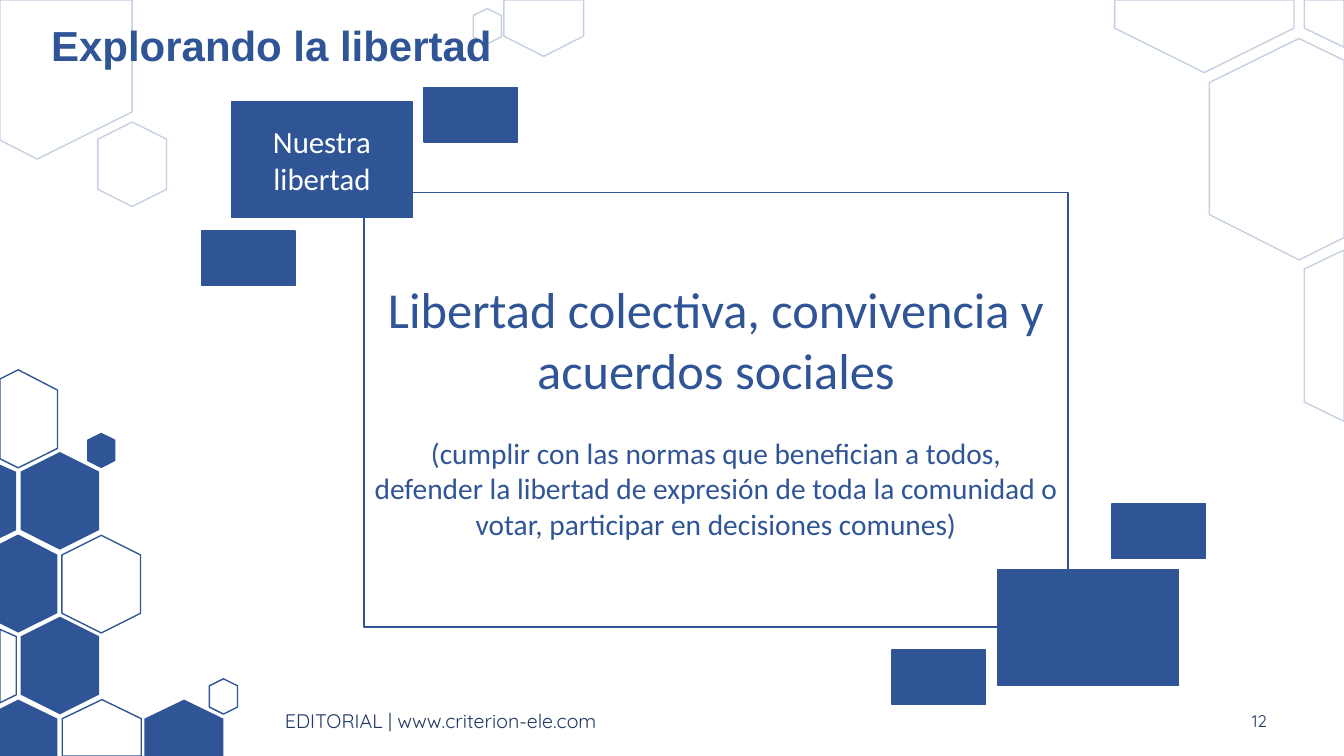
from dataclasses import dataclass

from lxml.etree import SubElement
from pptx import Presentation
from pptx.dml.color import RGBColor
from pptx.enum.shapes import MSO_SHAPE
from pptx.enum.text import MSO_ANCHOR, PP_ALIGN
from pptx.oxml.ns import qn
from pptx.util import Cm, Pt


@dataclass(frozen=True)
class Theme:
    blue: RGBColor = RGBColor(0x2F, 0x55, 0x97)
    navy: RGBColor = RGBColor(0x20, 0x38, 0x64)
    white: RGBColor = RGBColor(0xFF, 0xFF, 0xFF)
    line: Pt = Pt(1)
    pale_alpha: int = 28000
    heading_font: str = "Arial"
    body_font: str = "Calibri"
    footer_font: str = "Quicksand"
    title: Pt = Pt(30)
    statement: Pt = Pt(36)
    label: Pt = Pt(22)
    detail: Pt = Pt(21)
    footer: Pt = Pt(14)
    number: Pt = Pt(12)
    detail_gap: Pt = Pt(25.6)


THEME = Theme()

# Hexagon sizes before the quarter turn, in centimetres
LARGE, MEDIUM, SMALL = (2.46, 1.98), (2.13, 1.73), (0.89, 0.71)
# Distances between neighbouring honeycomb cells
ROW_PITCH, COLUMN_PITCH = 4.15, 2.07

# Pale cells cut by the slide edges
PALE_CELLS = [
    [(12.7, 0), (14.71, 0), (14.71, 0.91), (13.7, 1.42), (12.7, 0.91)],
    [(28.09, 0), (32.61, 0), (32.61, 0.71), (30.35, 1.83), (28.09, 0.71)],
    [(32.87, 0), (33.87, 0), (33.87, 1.19), (32.87, 0.71)],
    [(32.74, 0.97), (33.87, 1.52), (33.87, 5.99), (32.74, 6.55),
     (30.48, 5.41), (30.48, 2.08)],
    [(0, 0), (3.33, 0), (3.33, 2.82), (0.94, 4.01), (0, 3.53)],
    [(33.87, 6.3), (33.87, 10.62), (32.87, 10.13), (32.87, 6.78)],
]

# Honeycomb cells cut by the left and bottom edges
LEFT_CELL = [(0.46, 9.32), (1.45, 9.83), (1.45, 11.3), (0.46, 11.79),
             (0, 11.56), (0, 9.55)]
EDGE_SLIVER = [(0, 11.71), (0.41, 11.89), (0.41, 13.36), (0, 13.56)]
CORNER_CELL = [(0.46, 17.63), (1.45, 18.11), (1.45, 19.05), (0, 19.05),
               (0, 17.86)]
BOTTOM_CELL = [(2.57, 17.63), (3.56, 18.11), (3.56, 19.05), (1.57, 19.05),
               (1.57, 18.11)]


def paint(shape, fill, line=None, alpha=None):
    shape.shadow.inherit = False
    shape.fill.solid()
    shape.fill.fore_color.rgb = fill
    if line is None:
        shape.line.fill.background()
        return
    shape.line.color.rgb = line
    shape.line.width = THEME.line
    if alpha:
        color = shape.line._get_or_add_ln().find(".//" + qn("a:srgbClr"))
        SubElement(color, qn("a:alpha")).set("val", str(alpha))


def paint_cell(shape, style):
    if style == "solid":
        paint(shape, THEME.blue)
    elif style == "blank":
        paint(shape, THEME.white)
    else:
        paint(shape, THEME.white, THEME.blue,
              THEME.pale_alpha if style == "pale" else None)


def add_hexagon(page, center, size, style):
    (x, y), (width, height) = center, size
    hexagon = page.shapes.add_shape(
        MSO_SHAPE.HEXAGON, Cm(x - width / 2), Cm(y - height / 2), Cm(width), Cm(height))
    hexagon.rotation = 90
    paint_cell(hexagon, style)


def add_cut_cell(page, points, style, right=0, down=0):
    corners = [(Cm(x + right), Cm(y + down)) for x, y in points]
    builder = page.shapes.build_freeform(*corners[0])
    builder.add_line_segments(corners[1:], close=True)
    paint_cell(builder.convert_to_shape(), style)


def write(shape, texts, sizes, font, color, align=PP_ALIGN.LEFT, bold=False):
    frame = shape.text_frame
    frame.word_wrap = True
    frame.vertical_anchor = MSO_ANCHOR.MIDDLE
    for index, (text, size) in enumerate(zip(texts, sizes)):
        para = frame.add_paragraph() if index else frame.paragraphs[0]
        para.text = text
        para.alignment = align
        for span in para.runs:
            span.font.size = size
            span.font.name = font
            span.font.bold = bold
            span.font.color.rgb = color
    return frame


def add_text(page, bounds, text, size, font, color, **style):
    box = page.shapes.add_textbox(*map(Cm, bounds))
    return write(box, [text], [size], font, color, **style)


def add_block(page, position, size, fill=THEME.blue):
    block = page.shapes.add_shape(
        MSO_SHAPE.RECTANGLE, *map(Cm, position), *map(Cm, size))
    paint(block, fill, THEME.blue)
    return block


def add_background(page):
    # Pale hexagons along the top and right
    for points in PALE_CELLS:
        add_cut_cell(page, points, "pale")
    add_hexagon(page, (12.28, 0.66), SMALL, "pale")
    add_hexagon(page, (3.33, 4.14), MEDIUM, "pale")

    # Honeycomb in the lower left corner
    for row, (cell, sliver) in enumerate([("outline", "solid"), ("solid", "outline")]):
        add_cut_cell(page, LEFT_CELL, cell, down=row * ROW_PITCH)
        add_cut_cell(page, EDGE_SLIVER, sliver, down=row * ROW_PITCH)
        add_hexagon(page, (2.55, 10.57 + row * ROW_PITCH), LARGE,
                    "outline" if row else "blank")
        add_hexagon(page, (1.51, 12.62 + row * ROW_PITCH), LARGE, "solid")
    add_cut_cell(page, CORNER_CELL, "solid")
    for column, style in enumerate(["outline", "solid"]):
        add_cut_cell(page, BOTTOM_CELL, style, right=column * COLUMN_PITCH)
    add_hexagon(page, (5.63, 17.55), SMALL, "outline")
    add_hexagon(page, (2.55, 11.35), SMALL, "solid")


def add_frame_texts(page):
    # Footer, page number and title
    add_text(page, (6.93, 17.65, 16.59, 1.02), "EDITORIAL | www.criterion-ele.com",
             THEME.footer, THEME.footer_font, THEME.navy)
    add_text(page, (29.67, 17.65, 2.51, 1.02), "12", THEME.number,
             THEME.footer_font, THEME.navy, align=PP_ALIGN.RIGHT)
    title = add_text(page, (1.04, 0.46, 29.36, 1.52), "Explorando la libertad",
                     THEME.title, THEME.heading_font, THEME.blue, bold=True)
    title.paragraphs[0].line_spacing = 0.9


def add_content(page):
    # Central statement
    panel = add_block(page, (9.17, 4.85), (17.75, 10.95), THEME.white)
    frame = write(
        panel,
        ["Libertad colectiva, convivencia y acuerdos sociales",
         "(cumplir con las normas que benefician a todos, defender la libertad de "
         "expresión de toda la comunidad o votar, participar en decisiones comunes)"],
        [THEME.statement, THEME.detail], THEME.body_font, THEME.blue, PP_ALIGN.CENTER)
    frame.paragraphs[1].space_before = THEME.detail_gap

    # Blocks at two opposite corners of the statement
    large, small = (4.55, 2.92), (2.36, 1.37)
    label = add_block(page, (5.84, 2.57), large)
    write(label, ["Nuestra libertad"], [THEME.label], THEME.body_font,
          THEME.white, PP_ALIGN.CENTER)
    add_block(page, (25.15, 14.35), large)
    for position in [(5.08, 5.82), (28.02, 12.7), (10.69, 2.21), (22.48, 16.38)]:
        add_block(page, position, small)


def main():
    deck = Presentation()
    deck.slide_width, deck.slide_height = Cm(33.87), Cm(19.05)
    page = deck.slides.add_slide(deck.slide_layouts[6])
    add_background(page)
    add_frame_texts(page)
    add_content(page)
    deck.save("out.pptx")


if __name__ == "__main__":
    main()
